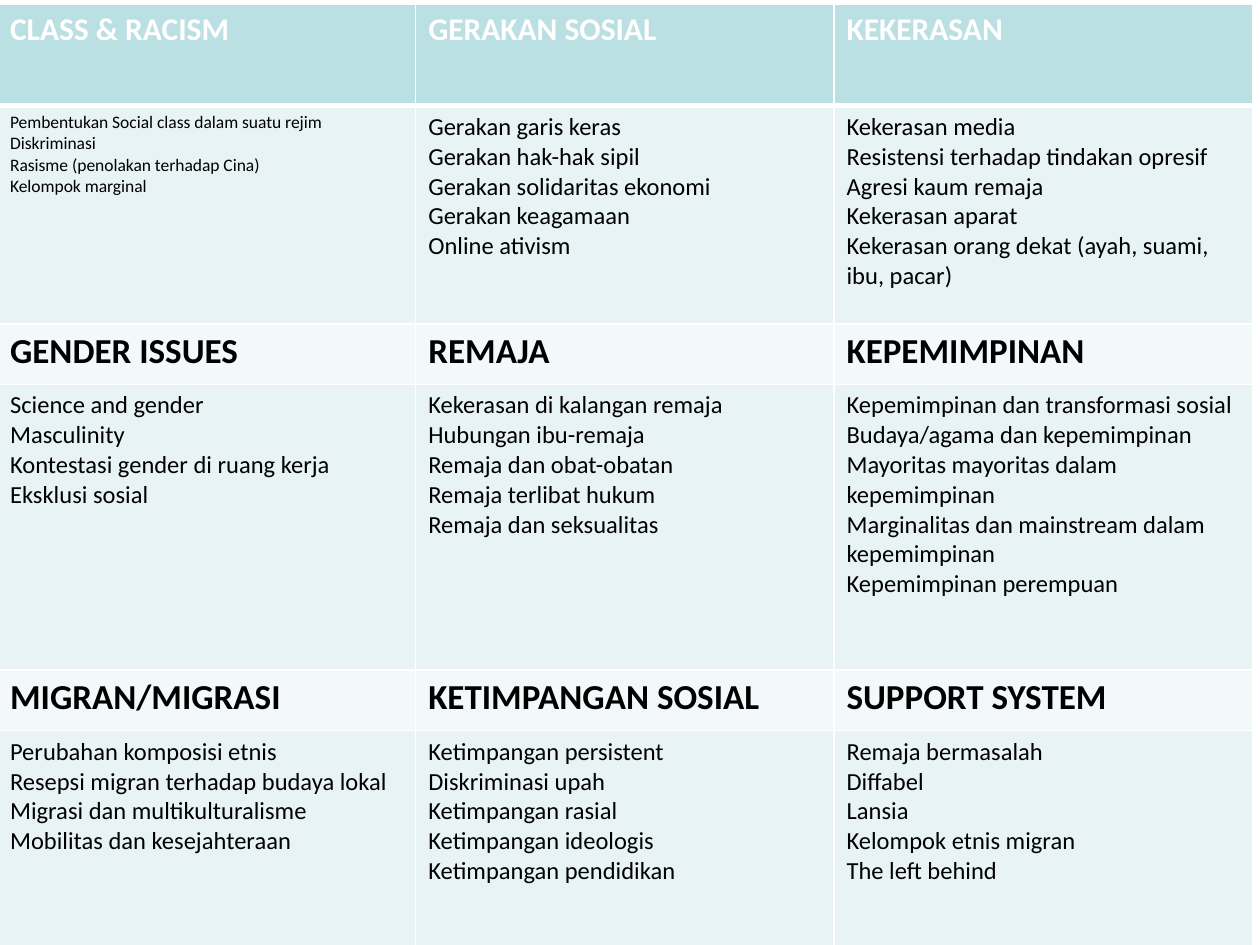
from lxml import etree
from pptx import Presentation
from pptx.dml.color import RGBColor
from pptx.oxml.ns import qn
from pptx.util import Inches, Pt

FONT = "Calibri"
WHITE = RGBColor(0xFF, 0xFF, 0xFF)
BLACK = RGBColor(0x00, 0x00, 0x00)
TEAL = RGBColor(0xBB, 0xE0, 0xE3)
LIGHT_TEAL = RGBColor(0xE7, 0xF3, 0xF4)
PALE_TEAL = RGBColor(0xF3, 0xF9, 0xFA)

LEFT, TOP, COL_WIDTH = -0.02, 0.03, 3.32
ROW_HEIGHTS = [0.81, 1.73, 0.48, 2.27, 0.48, 1.73]

# Each band is a row of themes: (heading, topics)
BANDS = [
    [
        ("CLASS & RACISM", [
            "Pembentukan Social class dalam suatu rejim", "Diskriminasi",
            "Rasisme (penolakan terhadap Cina)", "Kelompok marginal"]),
        ("GERAKAN SOSIAL", [
            "Gerakan garis keras", "Gerakan hak-hak sipil",
            "Gerakan solidaritas ekonomi", "Gerakan keagamaan",
            "Online ativism"]),
        ("KEKERASAN", [
            "Kekerasan media", "Resistensi terhadap tindakan opresif",
            "Agresi kaum remaja", "Kekerasan aparat",
            "Kekerasan orang dekat (ayah, suami, ibu, pacar)"]),
    ],
    [
        ("GENDER ISSUES", [
            "Science and gender", "Masculinity",
            "Kontestasi gender di ruang kerja", "Eksklusi sosial"]),
        ("REMAJA", [
            "Kekerasan di kalangan remaja", "Hubungan ibu-remaja",
            "Remaja dan obat-obatan", "Remaja terlibat hukum",
            "Remaja dan seksualitas"]),
        ("KEPEMIMPINAN", [
            "Kepemimpinan dan transformasi sosial",
            "Budaya/agama dan kepemimpinan",
            "Mayoritas mayoritas dalam kepemimpinan",
            "Marginalitas dan mainstream dalam kepemimpinan",
            "Kepemimpinan perempuan"]),
    ],
    [
        ("MIGRAN/MIGRASI", [
            "Perubahan komposisi etnis",
            "Resepsi migran terhadap budaya lokal",
            "Migrasi dan multikulturalisme", "Mobilitas dan kesejahteraan"]),
        ("KETIMPANGAN SOSIAL", [
            "Ketimpangan persistent", "Diskriminasi upah",
            "Ketimpangan rasial", "Ketimpangan ideologis",
            "Ketimpangan pendidikan"]),
        ("SUPPORT SYSTEM", [
            "Remaja bermasalah", "Diffabel", "Lansia",
            "Kelompok etnis migran", "The left behind"]),
    ],
]


def set_borders(cell, top=1, bottom=1):
    """White cell borders, widths in points; call before setting the fill."""
    tc_pr = cell._tc.get_or_add_tcPr()
    for side, width in (("L", 1), ("R", 1), ("T", top), ("B", bottom)):
        ln = etree.SubElement(tc_pr, qn(f"a:ln{side}"), w=str(Pt(width)))
        fill = etree.SubElement(ln, qn("a:solidFill"))
        etree.SubElement(fill, qn("a:srgbClr"), val=str(WHITE))


def fill_cell(cell, lines, size, fill, color=BLACK, bold=False, **borders):
    set_borders(cell, **borders)
    cell.fill.solid()
    cell.fill.fore_color.rgb = fill
    tf = cell.text_frame
    for i, line in enumerate(lines):
        p = tf.paragraphs[0] if i == 0 else tf.add_paragraph()
        r = p.add_run()
        r.text = line
        r.font.name = FONT
        r.font.size = Pt(size)
        r.font.bold = bold
        r.font.color.rgb = color


def add_theme(table, band, col, heading, topics):
    """Fill a heading cell and the topic cell below it."""
    head, body = table.cell(2 * band, col), table.cell(2 * band + 1, col)
    if band == 0:
        fill_cell(head, [heading], 18, TEAL, WHITE, bold=True, bottom=3)
        fill_cell(body, topics, 10 if col == 0 else 14, LIGHT_TEAL, top=3)
    else:
        fill_cell(head, [heading], 20, PALE_TEAL, bold=True)
        fill_cell(body, topics, 14, LIGHT_TEAL)


def add_theme_table(s):
    cols = len(BANDS[0])
    table = s.shapes.add_table(
        len(ROW_HEIGHTS), cols, Inches(LEFT), Inches(TOP),
        Inches(cols * COL_WIDTH), Inches(sum(ROW_HEIGHTS))).table
    for column in table.columns:
        column.width = Inches(COL_WIDTH)
    for row, height in zip(table.rows, ROW_HEIGHTS):
        row.height = Inches(height)
    for band, themes in enumerate(BANDS):
        for col, (heading, topics) in enumerate(themes):
            add_theme(table, band, col, heading, topics)


def main():
    prs = Presentation()
    prs.slide_width, prs.slide_height = Inches(10), Inches(7.5)
    s = prs.slides.add_slide(prs.slide_layouts[6])
    add_theme_table(s)
    prs.save("out.pptx")


if __name__ == "__main__":
    main()
